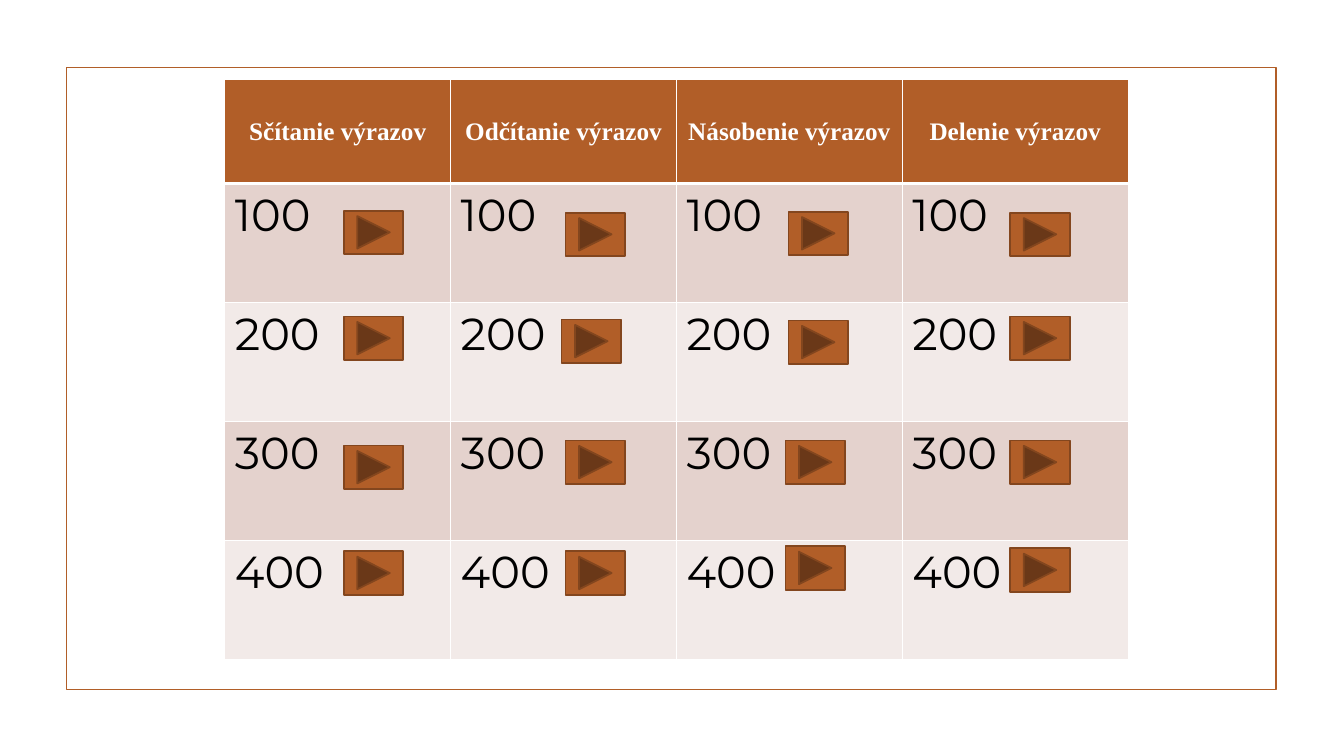
from lxml import etree
from pptx import Presentation
from pptx.dml.color import RGBColor
from pptx.enum.shapes import MSO_SHAPE as Preset
from pptx.enum.text import MSO_ANCHOR as Anchor, PP_ALIGN as Align
from pptx.oxml.ns import qn
from pptx.util import Inches, Pt

CATEGORIES = ["Sčítanie výrazov", "Odčítanie výrazov", "Násobenie výrazov", "Delenie výrazov"]
POINTS = ["100", "200", "300", "400"]
# Left and top of each button, one row per point value
BUTTON_PLACES = [
    [(3.41, 2.09), (5.61, 2.11), (7.82, 2.1), (10.02, 2.11)],
    [(3.41, 3.14), (5.57, 3.17), (7.82, 3.18), (10.02, 3.14)],
    [(3.41, 4.42), (5.61, 4.37), (7.79, 4.37), (10.02, 4.37)],
    [(3.41, 5.47), (5.61, 5.47), (7.79, 5.42), (10.02, 5.44)],
]


def color(value):
    return RGBColor.from_string(value)


class QuizBoard:
    ACCENT, OUTLINE, WHITE = "B15E28", "83461E", "FFFFFF"
    BANDS = ["E4D2CD", "F2EAE8"]
    HEADER_FONT = {"name": "Times New Roman", "size": Pt(18), "bold": True}
    POINTS_FONT = {"name": "Montserrat", "size": Pt(32), "bold": False}

    def __init__(self, slide):
        self.slide = slide

    def add_shape(self, preset, left, top, width, height, line, fill=None):
        shape = self.slide.shapes.add_shape(
            preset, Inches(left), Inches(top), Inches(width), Inches(height))
        shape.shadow.inherit = False
        if fill:
            shape.fill.solid()
            shape.fill.fore_color.rgb = color(fill)
        else:
            shape.fill.background()
        shape.line.color.rgb = color(line)
        shape.line.width = Pt(1.25)

    def add_frame(self):
        self.add_shape(Preset.RECTANGLE, 0.66, 0.67, 12, 6.17, self.ACCENT)

    def add_button(self, left, top):
        self.add_shape(Preset.ACTION_BUTTON_FORWARD_OR_NEXT, left, top, 0.59, 0.43,
                       self.OUTLINE, self.ACCENT)

    def set_borders(self, cell, **widths):
        """Draw white cell borders; widths in points by side letter, in L, R, T, B order."""
        properties = cell._tc.get_or_add_tcPr()
        for side, width in widths.items():
            line = etree.SubElement(properties, qn(f"a:ln{side}"), w=str(Pt(width)))
            fill = etree.SubElement(line, qn("a:solidFill"))
            etree.SubElement(fill, qn("a:srgbClr"), val=self.WHITE)

    def fill_cell(self, cell, text, fill, font_color, font, anchor, align):
        cell.fill.solid()
        cell.fill.fore_color.rgb = color(fill)
        cell.vertical_anchor = anchor
        cell.text = text
        paragraph = cell.text_frame.paragraphs[0]
        paragraph.alignment = align
        run_font = paragraph.runs[0].font
        for name, value in font.items():
            setattr(run_font, name, value)
        run_font.color.rgb = color(font_color)

    def add_table(self, left, top, column_width, header_height, row_height):
        rows, columns = len(POINTS) + 1, len(CATEGORIES)
        table = self.slide.shapes.add_table(
            rows, columns, Inches(left), Inches(top), Inches(column_width * columns),
            Inches(header_height + row_height * len(POINTS))).table
        for column in table.columns:
            column.width = Inches(column_width)
        for index, row in enumerate(table.rows):
            row.height = Inches(row_height if index else header_height)
            for category, cell in zip(CATEGORIES, row.cells):
                self.set_borders(cell, L=1, R=1, T=3 if index == 1 else 1, B=1 if index else 3)
                if index:
                    self.fill_cell(cell, POINTS[index - 1], self.BANDS[(index - 1) % 2],
                                   "000000", self.POINTS_FONT, Anchor.TOP, Align.LEFT)
                else:
                    self.fill_cell(cell, category, self.ACCENT, self.WHITE,
                                   self.HEADER_FONT, Anchor.MIDDLE, Align.CENTER)


def main():
    presentation = Presentation()
    presentation.slide_width, presentation.slide_height = Inches(13.33), Inches(7.5)
    board = QuizBoard(presentation.slides.add_slide(presentation.slide_layouts[6]))
    board.add_frame()
    board.add_table(2.23, 0.79, 2.24, 1.03, 1.18)
    for row in BUTTON_PLACES:
        for left, top in row:
            board.add_button(left, top)
    presentation.save("out.pptx")


if __name__ == "__main__":
    main()
